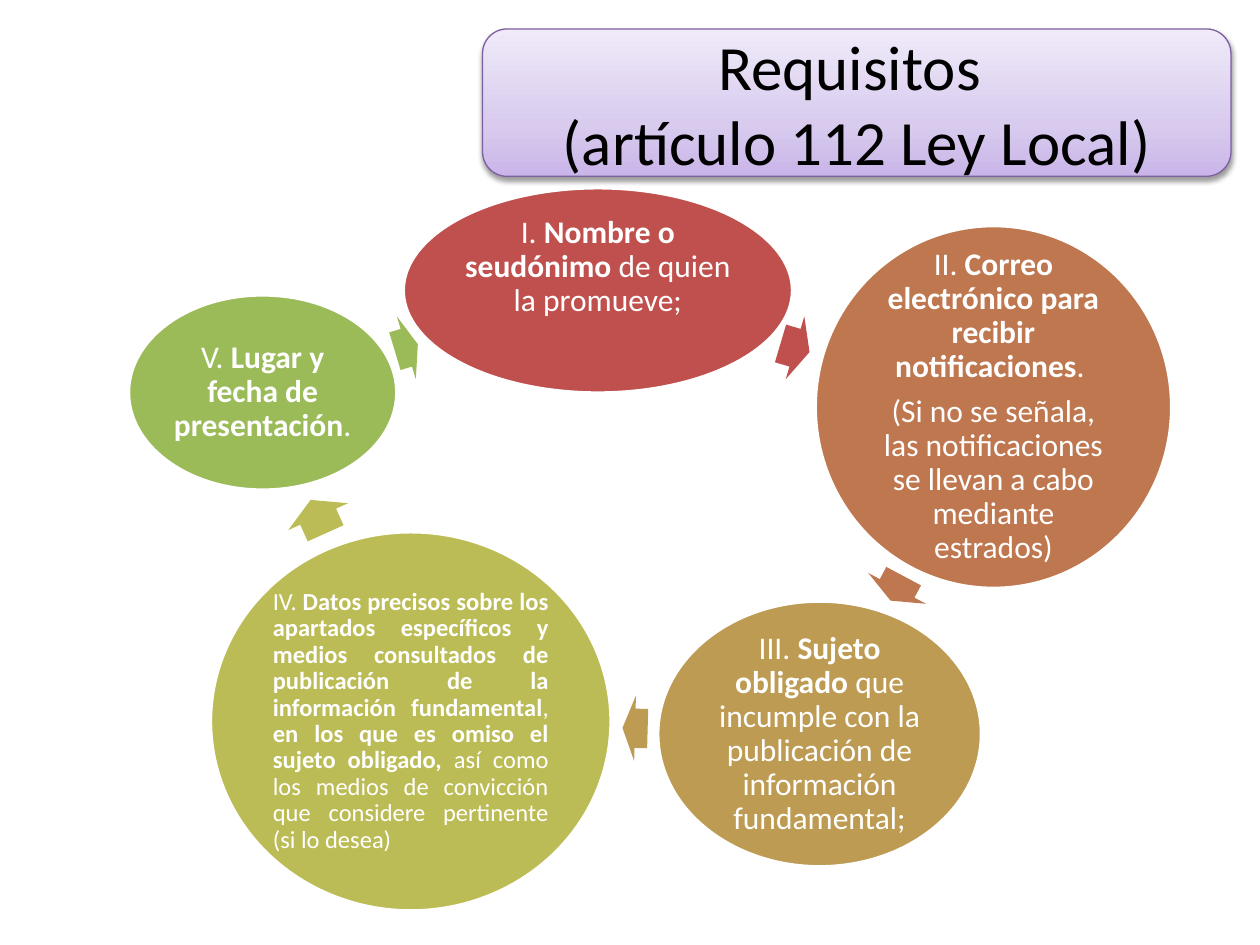
from dataclasses import dataclass

from pptx import Presentation
from pptx.dml.color import RGBColor
from pptx.enum.shapes import MSO_SHAPE as Preset
from pptx.enum.text import MSO_ANCHOR as Anchor, PP_ALIGN as Align
from pptx.oxml import parse_xml
from pptx.oxml.ns import nsdecls, qn
from pptx.util import Inches, Pt


@dataclass(frozen=True)
class Theme:
    font: str = "Calibri"
    title_size: int = 36
    body_size: int = 18
    dense_size: int = 14
    dark: str = "000000"
    light: str = "FFFFFF"
    title_line: str = "7D60A0"
    title_stops: tuple = ((0, "C9B5E8"), (35, "D8CBEE"), (100, "F0EAF9"))


@dataclass
class Requirement:
    color: str
    ellipse: tuple
    arrow: tuple
    turn: float
    paragraphs: tuple
    size: int = Theme.body_size
    align: Align = Align.CENTER
    lift: float = 0


THEME = Theme()

REQUIREMENTS = [
    Requirement("C0504D", (2.18, 0, 3.09, 1.63), (5.17, 1.01, 0.24, 0.52), 16.5,
                (("I. ", "Nombre o seudónimo", " de quien la promueve;"),), lift=0.36),
    Requirement("BF7750", (5.45, 0.3, 2.83, 2.88), (5.99, 2.92, 0.22, 0.52), 118.1,
                (("II. ", "Correo electrónico para recibir notificaciones", ". "),
                 ("(Si no se señala, las notificaciones se llevan a cabo mediante estrados)",))),
    Requirement("BD9B53", (4.2, 3.28, 2.57, 2.11), (3.92, 4.03, 0.2, 0.52), 181.6,
                (("III. ", "Sujeto obligado ",
                  "que incumple con la publicación de información fundamental;"),)),
    Requirement("BCBC56", (0.65, 2.73, 3.18, 3.01), (1.36, 2.35, 0.29, 0.52), 245.8,
                (("IV. ", "Datos precisos sobre los apartados específicos y medios consultados "
                  "de publicación de la información fundamental", ", ",
                  "en los que es omiso el sujeto obligado,",
                  " así como los medios de convicción que considere pertinente (si lo desea)"),),
                size=THEME.dense_size, align=Align.JUSTIFY),
    Requirement("9BBB59", (0, 0.85, 2.13, 1.55), (2.11, 1.01, 0.19, 0.52), 343.2,
                (("V. ", "Lugar y fecha de presentación", "."),)),
]


def apply(target, values):
    for name, value in values.items():
        setattr(target, name, value)


def add_preset(slide, preset, box, color=None):
    shape = slide.shapes.add_shape(preset, *map(Inches, box))
    shape.shadow.inherit = False
    if color:
        shape.fill.solid()
        shape.fill.fore_color.rgb = RGBColor.from_string(color)
    return shape


def set_line(shape, color, width):
    shape.line.color.rgb = RGBColor.from_string(color)
    shape.line.width = Pt(width)


def write(frame, paragraphs, size, color, paragraph_format):
    for index, parts in enumerate(paragraphs):
        paragraph = frame.add_paragraph() if index else frame.paragraphs[0]
        apply(paragraph, paragraph_format)
        for position, part in enumerate(parts):
            run = paragraph.add_run()
            run.text = part
            apply(run.font, {"name": THEME.font, "size": Pt(size), "bold": position % 2 == 1})
            run.font.color.rgb = RGBColor.from_string(color)


def add_title(slide, box, lines):
    banner = add_preset(slide, Preset.ROUNDED_RECTANGLE, box)
    stops = "".join(f'<a:gs pos="{place * 1000}"><a:srgbClr val="{color}"/></a:gs>'
                    for place, color in THEME.title_stops)
    banner._element.spPr.find(qn("a:prstGeom")).addnext(parse_xml(
        f'<a:gradFill {nsdecls("a")} rotWithShape="1"><a:gsLst>{stops}</a:gsLst>'
        '<a:lin ang="16200000" scaled="0"/></a:gradFill>'))
    set_line(banner, THEME.title_line, 0.75)
    banner._element.spPr.find(qn("a:effectLst")).append(parse_xml(
        f'<a:outerShdw {nsdecls("a")} blurRad="{Pt(3.1)}" dist="{Pt(1.6)}" dir="5400000" '
        f'rotWithShape="0"><a:srgbClr val="{THEME.dark}"><a:alpha val="38000"/>'
        '</a:srgbClr></a:outerShdw>'))
    apply(banner.text_frame, {"word_wrap": True, "vertical_anchor": Anchor.MIDDLE})
    write(banner.text_frame, [(line,) for line in lines], THEME.title_size, THEME.dark,
          {"alignment": Align.CENTER})


def add_requirement(slide, origin, item):
    def place(box):
        return origin[0] + box[0], origin[1] + box[1], *box[2:]

    ellipse = add_preset(slide, Preset.OVAL, place(item.ellipse), item.color)
    set_line(ellipse, THEME.light, 2)
    inset = Inches(0.03)
    apply(ellipse.text_frame, {
        "word_wrap": True, "vertical_anchor": Anchor.MIDDLE,
        "margin_left": inset, "margin_right": inset,
        "margin_top": inset, "margin_bottom": inset + Inches(item.lift)})
    write(ellipse.text_frame, item.paragraphs, item.size, THEME.light, {
        "alignment": item.align, "line_spacing": 0.9, "space_after": Pt(item.size * 0.35)})

    arrow = add_preset(slide, Preset.RIGHT_ARROW, place(item.arrow), item.color)
    arrow.line.fill.background()
    arrow.adjustments[0], arrow.adjustments[1] = 0.6, 0.5
    arrow.rotation = item.turn


def add_cycle(slide, origin, items):
    for item in items:
        add_requirement(slide, origin, item)


def main():
    deck = Presentation()
    apply(deck, {"slide_width": Inches(10), "slide_height": Inches(7.5)})
    slide = deck.slides.add_slide(deck.slide_layouts[6])
    add_cycle(slide, (1.02, 1.49), REQUIREMENTS)
    add_title(slide, (3.83, 0.23, 5.94, 1.17), ("Requisitos ", "(artículo 112 Ley Local)"))
    deck.save("out.pptx")


if __name__ == "__main__":
    main()
